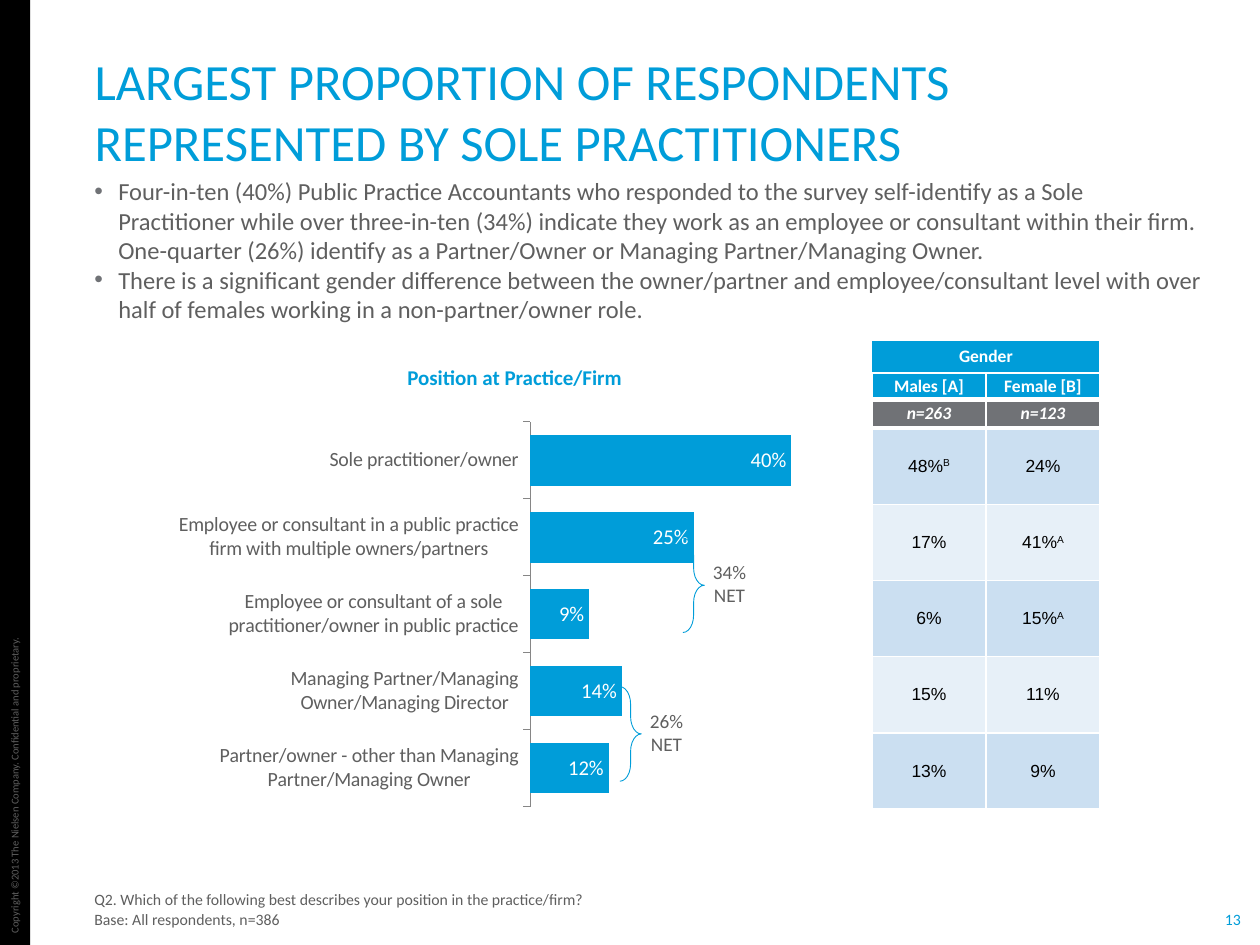
from dataclasses import dataclass

from pptx import Presentation
from pptx.chart.data import CategoryChartData
from pptx.dml.color import RGBColor
from pptx.enum.chart import XL_CHART_TYPE, XL_LABEL_POSITION, XL_TICK_LABEL_POSITION, XL_TICK_MARK
from pptx.enum.shapes import MSO_SHAPE
from pptx.enum.text import MSO_ANCHOR, MSO_AUTO_SIZE, PP_ALIGN
from pptx.oxml import parse_xml
from pptx.oxml.ns import nsdecls
from pptx.util import Inches, Pt

BLACK = RGBColor(0x00, 0x00, 0x00)
WHITE = RGBColor(0xFF, 0xFF, 0xFF)
BLUE = RGBColor(0x00, 0x9D, 0xD9)
TEXT_GRAY = RGBColor(0x5F, 0x5F, 0x5F)
SLATE = RGBColor(0x70, 0x72, 0x76)
AXIS_GRAY = RGBColor(0x86, 0x86, 0x86)
BANDS = [RGBColor(0xCB, 0xDF, 0xF1), RGBColor(0xE7, 0xF0, 0xF8)]

COLUMNS, ROWS = 100, 75
UNIT = Inches(10) // COLUMNS


@dataclass
class Box:
    left: float
    top: float
    width: float
    height: float

    def inner(self, left, top, width, height):
        return Box(self.left + left, self.top + top, width, height)

    def lengths(self):
        return [round(value * UNIT) for value in (self.left, self.top, self.width, self.height)]


def set_all(target, values):
    for name, value in values.items():
        setattr(target, name, value)


def set_font(font, size, color, name="Calibri", **extra):
    set_all(font, {"size": Pt(size), "name": name, **extra})
    font.color.rgb = color


def fill_text(shape, lines, size, color, align=PP_ALIGN.LEFT, anchor=MSO_ANCHOR.TOP,
              wrap=True, side=0.1, edge=0, gap=0, bullet=False, **extra):
    frame = shape.text_frame
    set_all(frame, {"word_wrap": wrap, "auto_size": MSO_AUTO_SIZE.NONE, "vertical_anchor": anchor,
                    "margin_left": Inches(side), "margin_right": Inches(side),
                    "margin_top": Inches(edge), "margin_bottom": Inches(edge)})
    for index, line in enumerate(lines):
        paragraph = frame.add_paragraph() if index else frame.paragraphs[0]
        paragraph.alignment = align
        paragraph.space_before = Pt(gap if index else 0)
        if bullet:
            add_bullet(paragraph)
        run = paragraph.add_run()
        run.text = line
        set_font(run.font, size, color, **extra)


def add_bullet(paragraph):
    properties = paragraph._p.get_or_add_pPr()
    properties.set("marL", str(Inches(0.19)))
    properties.set("indent", str(-Inches(0.19)))
    for xml in (f'<a:buClr {nsdecls("a")}><a:srgbClr val="{SLATE}"/></a:buClr>',
                f'<a:buFont {nsdecls("a")} typeface="Arial"/>',
                f'<a:buChar {nsdecls("a")} char="•"/>'):
        properties.append(parse_xml(xml))


def add_text(shapes, box, lines, size, color, **options):
    shape = shapes.add_textbox(*box.lengths())
    fill_text(shape, lines, size, color, **options)
    return shape


def add_side_band(slide, box):
    band = slide.shapes.add_shape(MSO_SHAPE.RECTANGLE, *box.lengths())
    band.shadow.inherit = False
    band.fill.solid()
    band.fill.fore_color.rgb = BLACK
    band.line.fill.background()
    notice = add_text(slide.shapes, box.inner(-11.8, 61.1, 25.9, 2),
                      ["Copyright ©2013 The Nielsen Company. Confidential and proprietary."],
                      6, TEXT_GRAY, wrap=False, edge=0.05)
    notice.rotation = 270


def add_title(slide, box, text):
    title = slide.shapes.title
    set_all(title, dict(zip(("left", "top", "width", "height"), box.lengths())))
    fill_text(title, [text], 29, BLUE, anchor=MSO_ANCHOR.BOTTOM)


def add_position_chart(slide, box, positions):
    data = CategoryChartData(number_format="#,##0%")
    data.categories = list(positions)
    data.add_series("Series 1", list(positions.values()))
    chart = slide.shapes.add_chart(XL_CHART_TYPE.BAR_CLUSTERED, *box.lengths(), data).chart
    set_all(chart, {"has_legend": False, "has_title": False})
    set_font(chart.font, 18, TEXT_GRAY)

    category_axis, value_axis = chart.category_axis, chart.value_axis
    set_all(category_axis, {"reverse_order": True, "major_tick_mark": XL_TICK_MARK.OUTSIDE,
                            "has_major_gridlines": False,
                            "tick_label_position": XL_TICK_LABEL_POSITION.LOW})
    set_font(category_axis.tick_labels.font, 11.5, TEXT_GRAY)
    category_axis.format.line.color.rgb = AXIS_GRAY
    set_all(value_axis, {"visible": False, "has_major_gridlines": False,
                         "minimum_scale": 0, "maximum_scale": 0.45})

    plot = chart.plots[0]
    set_all(plot, {"gap_width": 52, "vary_by_categories": False, "has_data_labels": True})
    bars = plot.series[0].format.fill
    bars.solid()
    bars.fore_color.rgb = BLUE
    set_all(plot.data_labels, {"show_value": True, "position": XL_LABEL_POSITION.INSIDE_END,
                               "number_format": "#,##0%", "number_format_is_linked": False})
    set_font(plot.data_labels.font, 12, WHITE)

    area = chart._chartSpace.chart.plotArea
    for old in area.findall("{*}layout"):
        area.remove(old)
    places = "".join(f'<c:{name} val="{value}"/>' for name, value in (
        ("layoutTarget", "inner"), ("xMode", "edge"), ("yMode", "edge"),
        ("x", 0.5), ("y", 0.03), ("w", 0.43), ("h", 0.94)))
    area.insert(0, parse_xml(f'<c:layout {nsdecls("c")}><c:manualLayout>{places}'
                             '</c:manualLayout></c:layout>'))


def add_net_brace(slide, box, label):
    group = slide.shapes.add_group_shape()
    brace = group.shapes.add_shape(MSO_SHAPE.RIGHT_BRACE, *box.lengths())
    brace.shadow.inherit = False
    brace.fill.background()
    brace.line.color.rgb = BLUE
    brace.line.width = Pt(0.5)
    brace.adjustments[0], brace.adjustments[1] = 0.81, 0.5
    add_text(group.shapes, box.inner(0.8, 1.3, 5.8, 4.7), [label], 11, TEXT_GRAY,
             align=PP_ALIGN.CENTER, edge=0.05)


def format_cell(cell, text, mark, fill, margin, borders, **font):
    set_all(cell, {"vertical_anchor": MSO_ANCHOR.MIDDLE, **{
        f"margin_{side}": Inches(margin) for side in ("left", "right", "top", "bottom")}})
    properties = cell._tc.get_or_add_tcPr()
    for side, width in zip("LRTB", borders):
        properties.append(parse_xml(
            f'<a:ln{side} {nsdecls("a")} w="{Pt(width)}"><a:solidFill>'
            f'<a:srgbClr val="{WHITE}"/></a:solidFill></a:ln{side}>'))
    cell.fill.solid()
    cell.fill.fore_color.rgb = fill
    paragraph = cell.text_frame.paragraphs[0]
    paragraph.alignment = PP_ALIGN.CENTER
    for part in filter(None, (text, mark)):
        run = paragraph.add_run()
        run.text = part
        set_font(run.font, 10, **font)
        if part is mark:
            run._r.get_or_add_rPr().set("baseline", "30000")


def add_gender_table(slide, box, heading, groups, bases, shares):
    rows = [[heading, ""], groups, bases, *shares]
    table = slide.shapes.add_table(len(rows), 2, *box.lengths()).table
    for column in table.columns:
        column.width = round(box.width * UNIT / 2)
    for row, height in zip(table.rows, [2.6, 2, 2.3] + [6.05] * len(shares)):
        row.height = round(height * UNIT)
    header = {"color": WHITE, "bold": True}
    styles = [
        (BLUE, 0.02, (0.75, 1, 1, 0.75), header),
        (BLUE, 0.02, (1, 1, 0.75, 3), header),
        (SLATE, 0.01, (1, 1, 3, 3), {**header, "italic": True}),
    ]
    for index in range(len(shares)):
        styles.append((BANDS[index % 2], 0, (1, 1, 1 if index else 3, 1),
                       {"color": BLACK, "name": "Arial", "bold": False}))
    for row_index, (texts, (fill, margin, borders, font)) in enumerate(zip(rows, styles)):
        for column_index, text in enumerate(texts):
            value, _, mark = text.partition("^")
            format_cell(table.cell(row_index, column_index), value, mark, fill, margin,
                        borders, **font)
    table.cell(0, 0).merge(table.cell(0, 1))


def main():
    presentation = Presentation()
    presentation.slide_width = COLUMNS * UNIT
    presentation.slide_height = ROWS * UNIT
    slide = presentation.slides.add_slide(presentation.slide_layouts[5])

    add_side_band(slide, Box(0, 0, 2.4, ROWS))
    add_title(slide, Box(6.5, 7.4, 91, 6.2),
              "LARGEST PROPORTION OF RESPONDENTS REPRESENTED BY SOLE PRACTITIONERS")
    add_text(slide.shapes, Box(6.5, 14, 90.2, 8.5), [
        "Four-in-ten (40%) Public Practice Accountants who responded to the survey self-identify as a Sole Practitioner while over three-in-ten (34%) indicate they work as an employee or consultant within their firm. One-quarter (26%) identify as a Partner/Owner or Managing Partner/Managing Owner.",
        "There is a significant gender difference between the owner/partner and employee/consultant level with over half of females working in a non-partner/owner role.",
    ], 14, TEXT_GRAY, bullet=True)
    add_text(slide.shapes, Box(17.5, 28.9, 46.7, 2.8), ["Position at Practice/Firm"], 12, BLUE,
             align=PP_ALIGN.CENTER, bold=True)
    add_position_chart(slide, Box(14.2, 32.5, 55, 32.5), {
        "Sole practitioner/owner": 0.4,
        "Employee or consultant in a public practice firm with multiple owners/partners": 0.25,
        "Employee or consultant of a sole practitioner/owner in public practice": 0.09,
        "Managing Partner/Managing Owner/Managing Director": 0.14,
        "Partner/owner - other than Managing Partner/Managing Owner": 0.12,
    })
    add_net_brace(slide, Box(54.2, 42.7, 1.7, 7.5), "34% NET")
    add_net_brace(slide, Box(49.2, 54.5, 1.7, 7.5), "26% NET")
    add_gender_table(slide, Box(69.2, 27, 18.1, 37.2), "Gender", ["Males [A]", "Female [B]"],
                     ["n=263", "n=123"],
                     [["48%^B", "24%"], ["17%", "41%^A"], ["6%", "15%^A"],
                      ["15%", "11%"], ["13%", "9%"]])
    add_text(slide.shapes, Box(6.5, 69.7, 93.5, 4), [
        "Q2. Which of the following best describes your position in the practice/firm?",
        "Base: All respondents, n=386",
    ], 9, TEXT_GRAY, anchor=MSO_ANCHOR.BOTTOM, gap=0.6)
    add_text(slide.shapes, Box(97.1, 72.2, 1.5, 1.5), ["13"], 9, BLUE, align=PP_ALIGN.CENTER,
             anchor=MSO_ANCHOR.MIDDLE, wrap=False, side=0)
    presentation.save("out.pptx")


if __name__ == "__main__":
    main()
